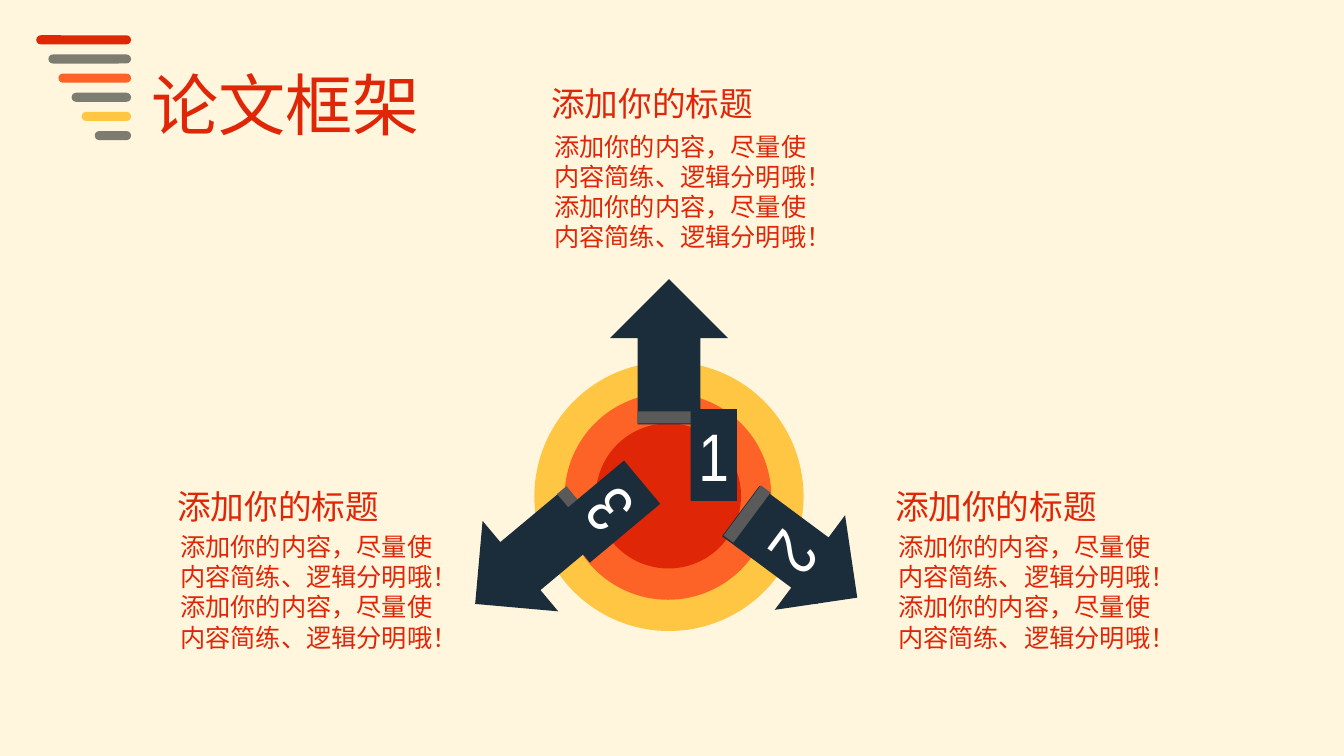
import pptx
import pptx.util
import pptx.dml.color
import pptx.enum.shapes
import pptx.enum.text
import pptx.oxml.ns
import lxml.etree

Inches = pptx.util.Inches
RGBColor = pptx.dml.color.RGBColor
KIND = pptx.enum.shapes.MSO_SHAPE
ALIGN = pptx.enum.text.PP_ALIGN
FIT = pptx.enum.text.MSO_AUTO_SIZE
ANCHOR = pptx.enum.text.MSO_ANCHOR

CREAM = RGBColor(0xFF, 0xF6, 0xDD)
RED = RGBColor(0xDF, 0x27, 0x08)
ORANGE = RGBColor(0xFD, 0x63, 0x26)
YELLOW = RGBColor(0xFE, 0xC6, 0x42)
NAVY = RGBColor(0x1B, 0x2D, 0x3A)
GRAY = RGBColor(0x5A, 0x5A, 0x5A)
STONE = RGBColor(0x7C, 0x7C, 0x70)
WHITE = RGBColor(0xFF, 0xFF, 0xFF)
HAN = "Noto Sans CJK SC"

deck = pptx.Presentation()
deck.slide_width = Inches(13.33)
deck.slide_height = Inches(7.5)
slide = deck.slides.add_slide(deck.slide_layouts[6])
slide.background.fill.solid()
slide.background.fill.fore_color.rgb = CREAM


def add_form(kind, box, color, turn=0):
    form = slide.shapes.add_shape(kind, *map(Inches, box))
    form.shadow.inherit = False
    form.fill.solid()
    form.fill.fore_color.rgb = color
    form.line.fill.background()
    form.rotation = turn
    return form


def put_text(form, words, size, font, color, frame):
    for name, value in frame.items():
        setattr(form.text_frame, name, value)
    run = form.text_frame.paragraphs[0].add_run()
    run.text = words
    style = {"size": pptx.util.Pt(size), "name": font}
    for name, value in style.items():
        setattr(run.font, name, value)
    run.font.color.rgb = color
    east = lxml.etree.SubElement(run.font._element, pptx.oxml.ns.qn("a:ea"))
    east.set("typeface", font)


LINE = {"word_wrap": False, "auto_size": FIT.SHAPE_TO_FIT_TEXT}
BLOCK = {"word_wrap": True, "auto_size": FIT.SHAPE_TO_FIT_TEXT}
TAB = {"word_wrap": False, "auto_size": FIT.NONE,
       "vertical_anchor": ANCHOR.MIDDLE}

title = slide.shapes.add_textbox(*map(Inches, (1.4, 0.58, 2.89, 0.91)))
put_text(title, "论文框架", 48, HAN, RED, LINE)

for left, top, size, color in [
    (5.3, 3.59, 2.67, YELLOW),
    (5.6, 3.9, 2.05, ORANGE),
    (5.91, 4.2, 1.44, RED),
]:
    add_form(KIND.OVAL, (left, top, size, size), color)

for mark, turn, arrow, fold, tab, spin in [
    ("1", 180, (6.05, 2.77), (6.32, 4.08), (6.85, 4.06, 0.46, 0.91), 0),
    ("2", 306.6, (7.34, 4.78), (7.1, 5.04), (7.63, 5.05, 0.54, 0.91), 126.6),
    ("3", 50.1, (4.68, 4.81), (5.46, 5.04), (5.74, 4.62, 0.56, 0.91), 230.1),
]:
    point = add_form(KIND.DOWN_ARROW, (*arrow, 1.17, 1.44), NAVY, turn)
    point.adjustments[0] = 0.53
    point.adjustments[1] = 0.5
    add_form(KIND.RECTANGLE, (*fold, 0.62, 0.12), GRAY, turn)
    label = add_form(KIND.RECTANGLE, tab, NAVY, spin)
    put_text(label, mark, 48, "Arial Narrow", WHITE, TAB)
    label.text_frame.paragraphs[0].alignment = ALIGN.CENTER

for left, top, gap in [(5.37, 0.77, 0.48), (8.78, 4.77, 0.45), (1.66, 4.77, 0.45)]:
    head = slide.shapes.add_textbox(*map(Inches, (left, top, 2.22, 0.5)))
    put_text(head, "添加你的标题", 24, HAN, RED, LINE)
    body = slide.shapes.add_textbox(
        *map(Inches, (left + 0.03, top + gap, 2.73, 1.62)))
    put_text(body, "添加你的内容，尽量使内容简练、逻辑分明哦！" * 2, 18, HAN, RED, BLOCK)

bars = [(0.94, RED), (0.82, STONE), (0.72, ORANGE),
        (0.59, STONE), (0.49, YELLOW), (0.36, STONE)]
for row, (width, color) in enumerate(bars):
    bar = add_form(KIND.ROUNDED_RECTANGLE,
                   (1.3 - width, 0.35 + 0.19 * row, width, 0.09), color)
    bar.adjustments[0] = 0.5

deck.save("out.pptx")
